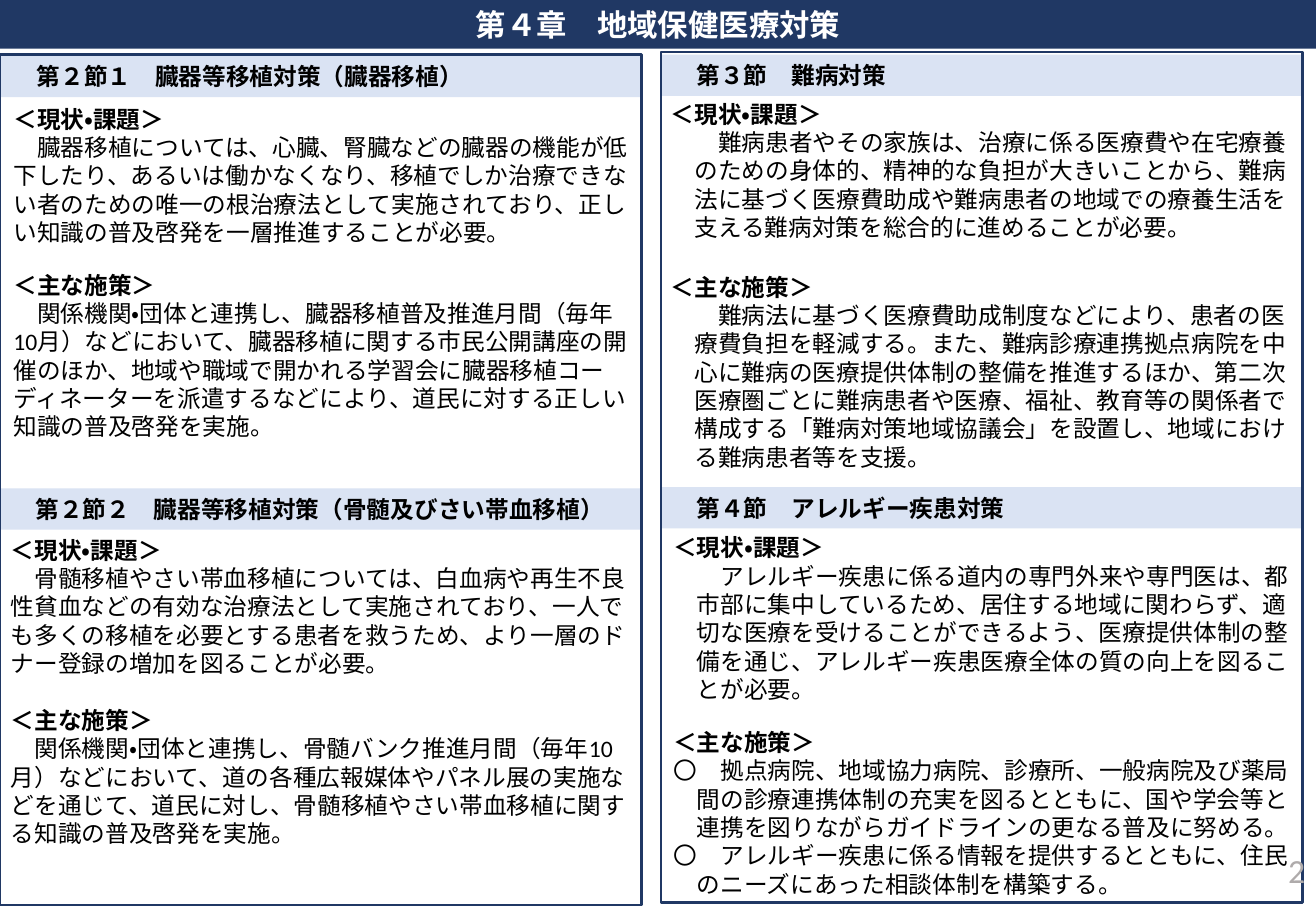
from pptx import Presentation
from pptx.dml.color import RGBColor as RGB
from pptx.enum.lang import MSO_LANGUAGE_ID as Lang
from pptx.enum.shapes import MSO_SHAPE as Shape
from pptx.enum.text import MSO_ANCHOR as Anchor, MSO_AUTO_SIZE as Fit, PP_ALIGN as Align
from pptx.oxml.xmlchemy import OxmlElement as Node
from pptx.util import Inches, Pt

NAVY, PALE, BLACK, WHITE, GRAY = "203864", "DAE3F3", "000000", "FFFFFF", "AFABAB"
EM = Pt(14)
WIDE = 5.28
BAR = 0.34

# Each section: bar place, bar text, body box, gap before the second heading,
# left margin in EM, then (heading, font, paragraphs) groups.
PARTS = [
    ((0.01, 0.46, 5.26, BAR), "　第２節１　臓器等移植対策（臓器移植）",
     (0.01, 0.81, WIDE, 2.89), 14.4, 0, [
        ("＜現状・課題＞", "Arial", [
            "　臓器移植については、心臓、腎臓などの臓器の機能が低下したり、あるいは働かなくなり、"
            "移植でしか治療できない者のための唯一の根治療法として実施されており、"
            "正しい知識の普及啓発を一層推進することが必要。"]),
        ("＜主な施策＞", "Calibri", [
            "　関係機関・団体と連携し、臓器移植普及推進月間（毎年10月）などにおいて、"
            "臓器移植に関する市民公開講座の開催のほか、地域や職域で開かれる学習会に"
            "臓器移植コーディネーターを派遣するなどにより、道民に対する正しい知識の普及啓発を実施。"])]),
    ((0, 4.02, WIDE, BAR), "　第２節２　臓器等移植対策（骨髄及びさい帯血移植）",
     (-0.01, 4.36, WIDE, 2.93), 16.8, 0, [
        ("＜現状・課題＞", "Arial", [
            "　骨髄移植やさい帯血移植については、白血病や再生不良性貧血などの有効な治療法として"
            "実施されており、一人でも多くの移植を必要とする患者を救うため、"
            "より一層のドナー登録の増加を図ることが必要。"]),
        ("＜主な施策＞", "Calibri", [
            "　関係機関・団体と連携し、骨髄バンク推進月間（毎年10月）などにおいて、"
            "道の各種広報媒体やパネル展の実施などを通じて、道民に対し、"
            "骨髄移植やさい帯血移植に関する知識の普及啓発を実施。"])]),
    ((5.44, 0.45, WIDE, BAR), "　第３節　難病対策",
     (5.42, 0.77, WIDE, 3.2), 18.4, 1, [
        ("＜現状・課題＞", "Arial", [
            "　難病患者やその家族は、治療に係る医療費や在宅療養のための身体的、精神的な負担が"
            "大きいことから、難病法に基づく医療費助成や難病患者の地域での療養生活を"
            "支える難病対策を総合的に進めることが必要。"]),
        ("＜主な施策＞", "Arial", [
            "　難病法に基づく医療費助成制度などにより、患者の医療費負担を軽減する。"
            "また、難病診療連携拠点病院を中心に難病の医療提供体制の整備を推進するほか、"
            "第二次医療圏ごとに難病患者や医療、福祉、教育等の関係者で構成する"
            "「難病対策地域協議会」を設置し、地域における難病患者等を支援。"])]),
    ((5.44, 4.01, WIDE, BAR), "　第４節　アレルギー疾患対策",
     (5.44, 4.34, WIDE, 3.13), 14.4, 1, [
        ("＜現状・課題＞", "Calibri", [
            "　アレルギー疾患に係る道内の専門外来や専門医は、都市部に集中しているため、"
            "居住する地域に関わらず、適切な医療を受けることができるよう、"
            "医療提供体制の整備を通じ、アレルギー疾患医療全体の質の向上を図ることが必要。"]),
        ("＜主な施策＞", "Arial", [
            "〇　拠点病院、地域協力病院、診療所、一般病院及び薬局間の診療連携体制の充実を"
            "図るとともに、国や学会等と連携を図りながらガイドラインの更なる普及に努める。",
            "〇　アレルギー疾患に係る情報を提供するとともに、住民のニーズにあった"
            "相談体制を構築する。"])]),
]


def color(code):
    return RGB.from_string(code)


def put(obj, **vals):
    for key, val in vals.items():
        setattr(obj, key, val)


def place(shape, box):
    put(shape, **dict(zip(("left", "top", "width", "height"), map(Inches, box))))


def paint(shape, code):
    shape.fill.solid()
    shape.fill.fore_color.rgb = color(code)


def setup(shape, anchor):
    frame = shape.text_frame
    put(frame, word_wrap=True, auto_size=Fit.NONE, vertical_anchor=anchor)
    return frame


def write(para, text, size=14, bold=False, font="Calibri", code=BLACK, align=Align.LEFT):
    para.alignment = align
    run = para.add_run()
    run.text = text
    put(run.font, name=font, size=Pt(size), bold=bold, language_id=Lang.JAPANESE)
    run.font.color.rgb = color(code)


def indent(para, left, first):
    """Set the margins in EM and take the bullet off."""
    props = para._p.get_or_add_pPr()
    props.set("marL", str(left * EM))
    props.set("indent", str(first * EM))
    props.append(Node("a:buNone"))


def add_rect(slide, box):
    rect = slide.shapes.add_shape(Shape.RECTANGLE, *map(Inches, box))
    rect.shadow.inherit = False
    return rect


def add_title(slide, box, text):
    title = slide.shapes.title
    place(title, box)
    paint(title, NAVY)
    frame = setup(title, Anchor.MIDDLE)
    write(frame.paragraphs[0], text, 18, True, code=WHITE, align=Align.CENTER)


def add_bar(slide, box, text):
    bar = add_rect(slide, box)
    paint(bar, PALE)
    bar.line.fill.background()
    write(setup(bar, Anchor.MIDDLE).paragraphs[0], text, bold=True)


def fill_body(body, box, gap, left, groups):
    place(body, box)
    frame = setup(body, Anchor.TOP)
    para = frame.paragraphs[0]
    for num, (head, font, texts) in enumerate(groups):
        if num:
            para = frame.add_paragraph()
        put(para, space_before=Pt(gap * num))
        indent(para, 0, 0)
        write(para, head, bold=True)
        for text in texts:
            para = frame.add_paragraph()
            put(para, space_before=Pt(0))
            indent(para, left, -1 if text.startswith("〇") else 0)
            write(para, text, font=font)


def add_frame(slide, box):
    rect = add_rect(slide, box)
    rect.fill.background()
    rect.line.color.rgb = color(NAVY)
    rect.line.width = Pt(1.5)


def add_number(slide, box, text):
    label = slide.shapes.add_textbox(*map(Inches, box))
    frame = setup(label, Anchor.MIDDLE)
    write(frame.paragraphs[0], text, 20, code=GRAY, align=Align.RIGHT)


def main():
    deck = Presentation()
    put(deck, slide_width=Inches(10.83), slide_height=Inches(7.5))
    slide = deck.slides.add_slide(deck.slide_layouts.get_by_name("Comparison"))
    add_title(slide, (0, 0, 10.83, 0.4), "第４章　地域保健医療対策")
    bodies = list(slide.placeholders)[1:]
    for body, (spot, name, box, gap, left, groups) in zip(bodies, PARTS):
        add_bar(slide, spot, name)
        fill_body(body, box, gap, left, groups)
    for left, top in ((0, 0.45), (5.44, 0.43)):
        add_frame(slide, (left, top, WIDE, 7))
    add_number(slide, (8.4, 6.96, 2.44, 0.4), "2")
    deck.save("out.pptx")


if __name__ == "__main__":
    main()
